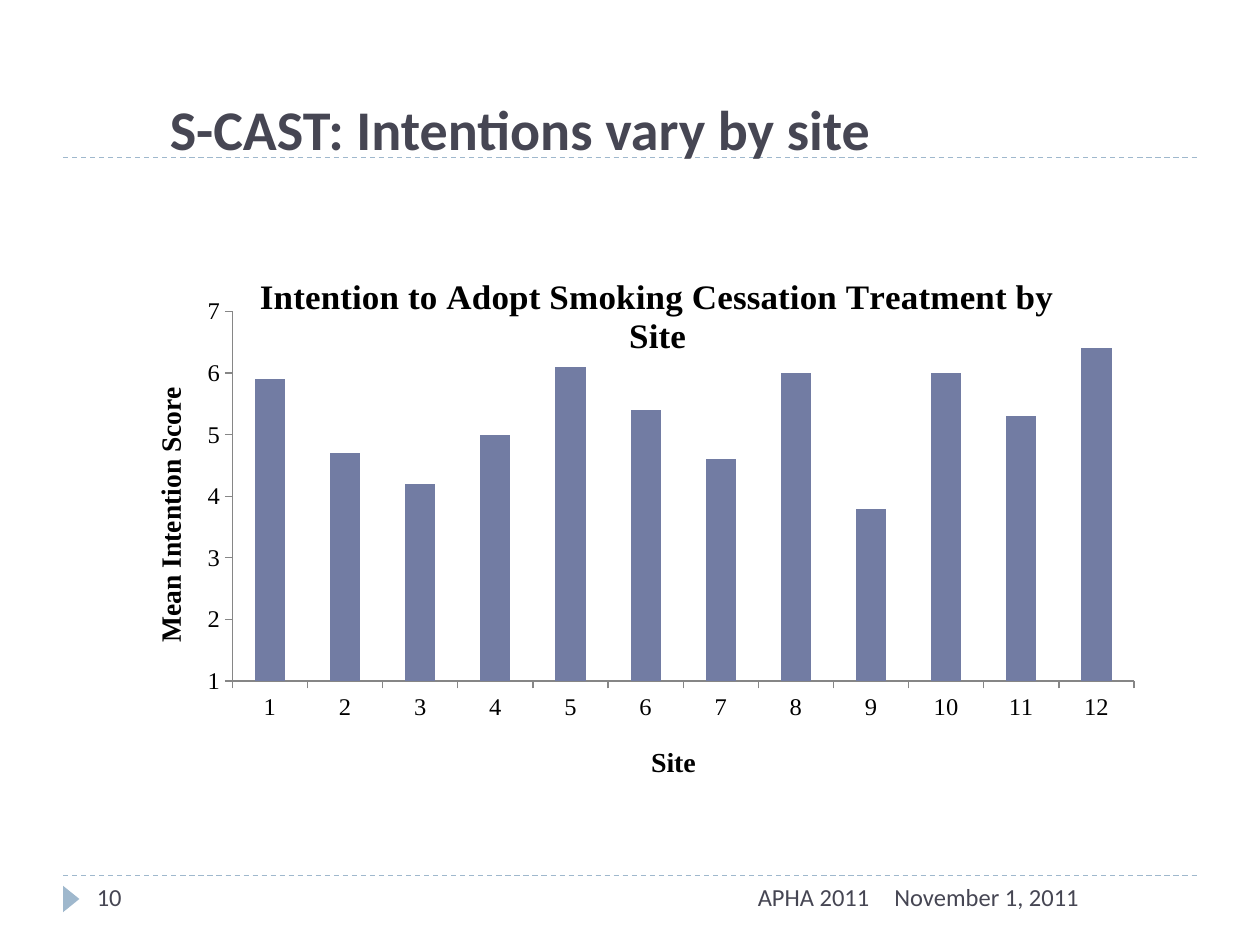
"""Build the slide on smoking cessation intentions by site."""
import pptx
import pptx.util
import pptx.chart.data
import pptx.dml.color
import pptx.enum.chart
import pptx.enum.dml
import pptx.enum.shapes
import pptx.enum.text
import pptx.oxml
import pptx.oxml.ns
from pptx.util import Pt

HEADLINE = "S-CAST: Intentions vary by site"
CHART_TITLE = "Intention to Adopt Smoking Cessation Treatment by Site"
SITE_TITLE = "Site"
SCORE_TITLE = "Mean Intention Score"
SCORES = [5.9, 4.7, 4.2, 5, 6.1, 5.4, 4.6, 6, 3.8, 6, 5.3, 6.4]
FOOTERS = [
    ("November 1, 2011", 504, 180, "LEFT"),
    ("10", 48.24, 156.24, "LEFT"),
    ("APHA 2011", 228.24, 275.76, "RIGHT"),
]
RULE_HEIGHTS = [500.4, 90]
THEME = {
    "text": "464653", "accent": "9FB8CD", "bar": "727CA3", "axis": "868686", "ink": "000000",
    "font": "Calibri", "chart_font": "Times New Roman",
    "headline": 32, "chart_title": 20, "axis_title": 16, "label": 14,
}


def color(key):
    return pptx.dml.color.RGBColor.from_string(THEME[key])


def style(font, size, ink="text", family="font", bold=False):
    font.name, font.size, font.bold = THEME[family], Pt(THEME[size]), bold
    font.color.rgb = color(ink)


def add_text(slide, text, box, size, align="LEFT", anchor="TOP", bold=False):
    frame = slide.shapes.add_textbox(*map(Pt, box)).text_frame
    frame.word_wrap = True
    frame.vertical_anchor = getattr(pptx.enum.text.MSO_ANCHOR, anchor)
    paragraph = frame.paragraphs[0]
    paragraph.text = text
    paragraph.alignment = getattr(pptx.enum.text.PP_ALIGN, align)
    style(paragraph.font, size, bold=bold)


def add_rule(slide, y):
    rule = slide.shapes.add_connector(
        pptx.enum.shapes.MSO_CONNECTOR.STRAIGHT, Pt(36), Pt(y), Pt(684), Pt(y))
    rule.line.color.rgb = color("accent")
    rule.line.width = Pt(0.75)
    rule.line.dash_style = pptx.enum.dml.MSO_LINE.DASH
    rule._element.spPr.append(pptx.oxml.parse_xml(
        f'<a:effectLst {pptx.oxml.ns.nsdecls("a")}/>'))


def place(element, index, settings):
    for layout in element.findall(pptx.oxml.ns.qn("c:layout")):
        element.remove(layout)
    parts = "".join(f'<c:{tag} val="{value}"/>' for tag, value in settings)
    element.insert(index, pptx.oxml.parse_xml(
        f'<c:layout {pptx.oxml.ns.nsdecls("c")}><c:manualLayout>{parts}'
        '</c:manualLayout></c:layout>'))


def set_title(title, text, size, x, y):
    paragraph = title.text_frame.paragraphs[0]
    paragraph.text = text
    style(paragraph.font, size, "ink", "chart_font", True)
    place(title._element, 1, [("xMode", "edge"), ("yMode", "edge"), ("x", x), ("y", y)])


def style_axis(axis, text, x, y):
    axis.has_major_gridlines = False
    axis.major_tick_mark = pptx.enum.chart.XL_TICK_MARK.OUTSIDE
    axis.minor_tick_mark = pptx.enum.chart.XL_TICK_MARK.NONE
    axis.format.line.color.rgb = color("axis")
    style(axis.tick_labels.font, "label", "ink", "chart_font")
    set_title(axis.axis_title, text, "axis_title", x, y)


def add_score_chart(slide):
    data = pptx.chart.data.CategoryChartData()
    data.categories = [str(site + 1) for site in range(len(SCORES))]
    data.add_series("Series 1", SCORES)
    chart = slide.shapes.add_chart(
        pptx.enum.chart.XL_CHART_TYPE.COLUMN_CLUSTERED,
        Pt(54), Pt(138.24), Pt(606.24), Pt(311.76), data).chart
    chart.has_legend = False
    style(chart.font, "label", "ink")
    set_title(chart.chart_title, CHART_TITLE, "chart_title", 0.15, 0.05)
    chart.chart_title._element.find(pptx.oxml.ns.qn("c:overlay")).set("val", "1")
    style_axis(chart.category_axis, SITE_TITLE, 0.52, 0.93)
    scores = chart.value_axis
    style_axis(scores, SCORE_TITLE, 0.05, 0.27)
    scores.minimum_scale, scores.maximum_scale, scores.major_unit = 1, 7, 1
    body = scores.axis_title.text_frame._element.find(pptx.oxml.ns.qn("a:bodyPr"))
    body.set("rot", "-5400000")
    body.set("vert", "horz")
    plot = chart.plots[0]
    plot.vary_by_categories = False
    plot.gap_width = 150
    bars = plot.series[0].format.fill
    bars.solid()
    bars.fore_color.rgb = color("bar")
    area = chart._chartSpace.chart.plotArea
    place(area, 0, [("layoutTarget", "inner"), ("xMode", "edge"), ("yMode", "edge"),
                    ("x", 0.13), ("y", 0.13), ("w", 0.85), ("h", 0.69)])


def main():
    deck = pptx.Presentation()
    deck.slide_width, deck.slide_height = Pt(720), Pt(540)
    slide = deck.slides.add_slide(deck.slide_layouts[6])
    for y in RULE_HEIGHTS:
        add_rule(slide, y)
    marker = slide.shapes.add_shape(
        pptx.enum.shapes.MSO_SHAPE.ISOSCELES_TRIANGLE, Pt(33.12), Pt(509.04), Pt(15.12), Pt(9.36))
    marker.rotation = 90
    marker.shadow.inherit = False
    marker.fill.solid()
    marker.fill.fore_color.rgb = color("accent")
    marker.line.fill.background()
    add_text(slide, HEADLINE, (90, 41.76, 545.76, 54), "headline", anchor="BOTTOM", bold=True)
    add_score_chart(slide)
    for text, left, width, align in FOOTERS:
        add_text(slide, text, (left, 500.4, width, 28.8), "label", align)
    deck.save("out.pptx")


if __name__ == "__main__":
    main()
